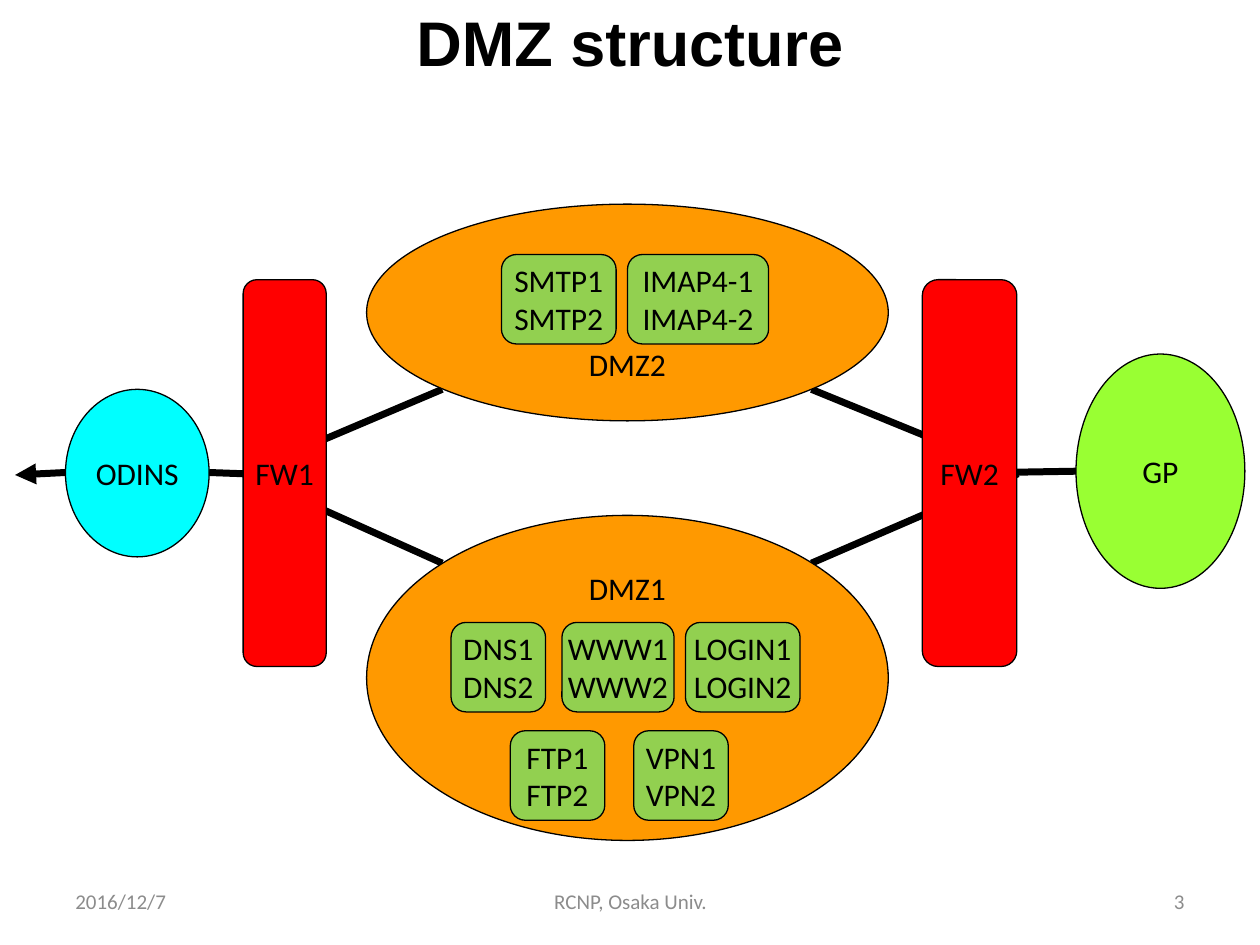
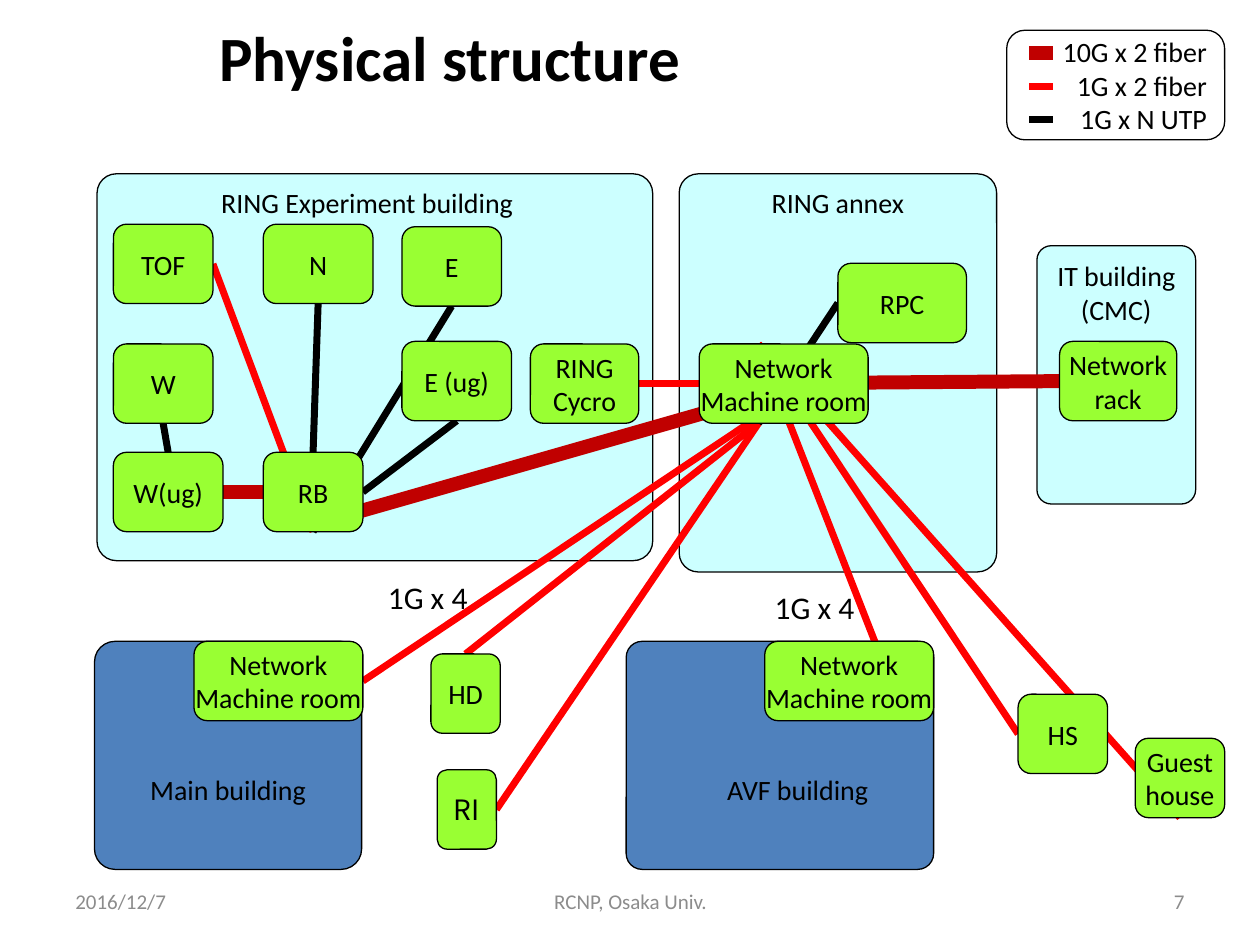
from lxml import etree
from pptx import Presentation
from pptx.dml.color import RGBColor
from pptx.enum import shapes, text
from pptx.oxml.ns import qn
from pptx.util import Pt

# Palette
BLACK = RGBColor(0x00, 0x00, 0x00)
GREY = RGBColor(0x8C, 0x8C, 0x8C)
RED = RGBColor(0xFF, 0x00, 0x00)
DARK_RED = RGBColor(0xC0, 0x00, 0x00)
ORANGE = RGBColor(0xFF, 0x99, 0x00)
CYAN = RGBColor(0x00, 0xFF, 0xFF)
PALE_CYAN = RGBColor(0xCC, 0xFF, 0xFF)
BLUE = RGBColor(0x4F, 0x81, 0xBD)
LIME = RGBColor(0x99, 0xFF, 0x33)
GREEN = RGBColor(0x92, 0xD0, 0x50)

# The slide is a grid of 10 columns and 7.5 rows of square cells
CELL = 914400
COLUMNS, ROWS = 10, 7.5
ROUND = shapes.MSO_SHAPE.ROUNDED_RECTANGLE
ELLIPSE = shapes.MSO_SHAPE.OVAL
TOP, MIDDLE, BOTTOM = (text.MSO_ANCHOR.TOP, text.MSO_ANCHOR.MIDDLE,
                       text.MSO_ANCHOR.BOTTOM)
LEFT, CENTER, RIGHT = text.PP_ALIGN.LEFT, text.PP_ALIGN.CENTER, text.PP_ALIGN.RIGHT
BODY_FONT = "Calibri"
THIN, THICK = 4, 8

# Services: left, width, name pattern of the two servers
SERVICE_HEIGHT = 0.71
SERVICE_ROWS = [
    (2.02, [(3.98, 0.91, "SMTP{}"), (4.98, 1.12, "IMAP4-{}")]),
    (4.94, [(3.58, 0.75, "DNS{}"), (4.46, 0.89, "WWW{}"), (5.44, 0.91, "LOGIN{}")]),
    (5.8, [(4.05, 0.75, "FTP{}"), (5.03, 0.75, "VPN{}")]),
]

# Rooms: left, top, width, label
ROOM_HEIGHT = 0.63
MACHINE_ROOM = "Network\nMachine room"
ROOMS = {
    "tof": (0.9, 1.78, 0.79, "TOF"),
    "n": (2.09, 1.78, 0.87, "N"),
    "e": (3.19, 1.8, 0.79, "E"),
    "w": (0.9, 2.73, 0.79, "W"),
    "e_ug": (3.19, 2.71, 0.87, "E (ug)"),
    "cycro": (4.21, 2.73, 0.86, "RING\nCycro"),
    "w_ug": (0.9, 3.59, 0.87, "W(ug)"),
    "rb": (2.09, 3.59, 0.79, "RB"),
    "rpc": (6.65, 2.09, 1.02, "RPC"),
    "annex": (5.55, 2.73, 1.34, MACHINE_ROOM),
    "rack": (8.41, 2.71, 0.93, "Network\nrack"),
    "main": (1.54, 5.09, 1.34, MACHINE_ROOM),
    "avf": (6.07, 5.09, 1.34, MACHINE_ROOM),
    "hd": (3.42, 5.19, 0.55, "HD"),
    "ri": (3.47, 6.11, 0.47, "RI"),
    "hs": (8.08, 5.51, 0.71, "HS"),
    "guest": (9.01, 5.86, 0.71, "Guest\nhouse"),
}


def cells(*counts):
    return [round(count * CELL) for count in counts]


def write(frame, words, size, align=CENTER, anchor=MIDDLE, wrap=False,
          font=BODY_FONT, color=BLACK, bold=False):
    frame.word_wrap = wrap
    frame.vertical_anchor = anchor
    for index, line in enumerate(words.split("\n")):
        para = frame.paragraphs[0] if index == 0 else frame.add_paragraph()
        para.alignment = align
        span = para.add_run()
        span.text = line
        span.font.size = Pt(size)
        span.font.name = font
        span.font.bold = bold
        span.font.color.rgb = color


def add_box(page, kind, place, fill, words, size, radius=None, inset=None, **style):
    box = page.shapes.add_shape(kind, *cells(*place))
    box.shadow.inherit = False
    if fill is None:
        box.fill.background()
    else:
        box.fill.solid()
        box.fill.fore_color.rgb = fill
    box.line.color.rgb = BLACK
    box.line.width = Pt(0.75)
    if radius is not None:
        box.adjustments[0] = radius
    for side, amount in (inset or {}).items():
        setattr(box.text_frame, "margin_" + side, cells(amount)[0])
    write(box.text_frame, words, size, **style)


def add_label(page, place, words, size, **style):
    label = page.shapes.add_textbox(*cells(*place))
    write(label.text_frame, words, size, wrap=True, **style)


def add_link(page, start, end, color=BLACK, weight=THIN, arrow=False):
    link = page.shapes.add_connector(shapes.MSO_CONNECTOR.STRAIGHT,
                                     *cells(*start, *end))
    link.line.color.rgb = color
    link.line.width = Pt(weight)
    if arrow:
        etree.SubElement(link.line._get_or_add_ln(), qn("a:tailEnd"), type="triangle")
    etree.SubElement(link._element.spPr, qn("a:effectLst"))


def edge(name, side):
    """Middle of one side of a room."""
    left, top, width, _ = ROOMS[name]
    across, down = {"top": (0.5, 0), "bottom": (0.5, 1),
                    "left": (0, 0.5), "right": (1, 0.5)}[side]
    return left + across * width, top + down * ROOM_HEIGHT


def new_page(deck, number, title, place, font):
    page = deck.slides.add_slide(deck.slide_layouts[5])
    heading = page.shapes.title
    heading.left, heading.top, heading.width, heading.height = cells(*place)
    write(heading.text_frame, title, 36, wrap=True, font=font, bold=True)
    # Footer
    for left, width, words, align in [(0.5, 2.33, "2016/12/7", LEFT),
                                      (3.42, 3.17, "RCNP, Osaka Univ.", CENTER),
                                      (7.17, 2.33, str(number), RIGHT)]:
        add_label(page, (left, 6.95, width, 0.4), words, 12,
                  align=align, anchor=MIDDLE, color=GREY)
    return page


def draw_dmz(deck):
    page = new_page(deck, 3, "DMZ structure", (0.75, -0.03, 8.5, 0.71), "Arial")

    # Links, under the zones they join
    outer_wall, inner_wall = (1.93, 3.76), (8.08, 3.76)
    for height in (3.09, 4.47):
        add_link(page, outer_wall, (3.51, height))
        add_link(page, (6.44, height), inner_wall)
    add_link(page, (1.66, 3.75), outer_wall)
    add_link(page, (7.32, 3.76), (8.54, 3.74))
    add_link(page, (0.52, 3.75), (0.12, 3.77), arrow=True)

    # Networks, firewalls and zones
    for kind, place, fill, words, anchor in [
            (ELLIPSE, (0.52, 3.09, 1.14, 1.33), CYAN, "ODINS", MIDDLE),
            (ELLIPSE, (8.54, 2.81, 1.34, 1.86), LIME, "GP", MIDDLE),
            (ROUND, (1.93, 2.22, 0.66, 3.07), RED, "FW1", MIDDLE),
            (ROUND, (7.32, 2.22, 0.75, 3.07), RED, "FW2", MIDDLE),
            (ELLIPSE, (2.91, 1.62, 4.14, 1.72), ORANGE, "DMZ2", BOTTOM),
            (ELLIPSE, (2.91, 4.09, 4.14, 2.58), ORANGE, "DMZ1", TOP)]:
        add_box(page, kind, place, fill, words, 18, anchor=anchor)

    # Servers, in pairs
    for top, services in SERVICE_ROWS:
        for left, width, name in services:
            pair = "\n".join(name.format(number) for number in (1, 2))
            add_box(page, ROUND, (left, top, width, SERVICE_HEIGHT), GREEN, pair, 18)


def draw_buildings(page):
    for place, fill, words, radius, anchor, inset in [
            ((5.39, 1.38, 2.52, 3.16), PALE_CYAN, "RING annex", 0.06, TOP, {}),
            ((0.77, 1.38, 4.41, 3.07), PALE_CYAN, "RING Experiment building",
             0.05, TOP, {"right": 0.22}),
            ((8.23, 1.95, 1.26, 2.05), PALE_CYAN, "IT building\n(CMC)",
             0.09, TOP, {"top": 0.07}),
            ((0.75, 5.09, 2.12, 1.81), BLUE, "Main building",
             0.09, MIDDLE, {"top": 0.58}),
            ((4.97, 5.09, 2.44, 1.81), BLUE, "AVF building",
             0.07, MIDDLE, {"top": 0.58, "left": 0.38})]:
        add_box(page, ROUND, place, fill, words, 16, radius, inset, anchor=anchor)


def draw_cables(page):
    hub_top, hub_bottom, hub_middle = (6.02, 2.73), (6.02, 3.36), (6.42, 3.04)
    # 10G fiber
    for start, end in [((2.64, 4.12), hub_middle),
                       (edge("w_ug", "right"), edge("rb", "left")),
                       (hub_middle, edge("rack", "left"))]:
        add_link(page, start, end, DARK_RED, THICK)
    # 1G fiber
    for start, end in [(edge("hd", "top"), hub_middle),
                       (edge("main", "right"), hub_middle),
                       (edge("ri", "right"), hub_bottom),
                       (hub_top, edge("guest", "bottom")),
                       (hub_top, edge("hs", "left")),
                       (hub_top, (6.95, 5.11)),
                       (edge("cycro", "right"), edge("annex", "left")),
                       (edge("tof", "right"), edge("rb", "bottom"))]:
        add_link(page, start, end, RED)
    # UTP
    for start, end in [(edge("rpc", "left"), hub_bottom),
                       (edge("w", "bottom"), edge("w_ug", "top")),
                       (edge("e_ug", "bottom"), edge("rb", "right")),
                       (edge("e", "bottom"), edge("rb", "bottom")),
                       (edge("n", "bottom"), edge("rb", "top"))]:
        add_link(page, start, end)


def draw_legend(page):
    add_box(page, ROUND, (7.99, 0.24, 1.73, 0.87), None,
            "10G x 2 fiber\n1G x 2 fiber\n1G x N UTP", 16, align=RIGHT)
    for height, color, weight in [(0.42, DARK_RED, THICK), (0.69, RED, THIN),
                                  (0.95, BLACK, THIN)]:
        add_link(page, (8.17, height), (8.36, height), color, weight)


def draw_physical(deck):
    page = new_page(deck, 7, "Physical structure", (0.75, 0.06, 5.64, 0.77), BODY_FONT)
    draw_buildings(page)
    draw_cables(page)
    for name, (left, top, width, words) in ROOMS.items():
        font = "Noto Sans CJK JP" if name == "ri" else BODY_FONT
        add_box(page, ROUND, (left, top, width, ROOM_HEIGHT), LIME, words, 16, font=font)
    for left, top in [(2.98, 4.54), (6.05, 4.62)]:
        add_label(page, (left, top, 0.92, 0.4), "1G x 4", 18, align=LEFT, anchor=TOP)
    draw_legend(page)


def main():
    deck = Presentation()
    deck.slide_width, deck.slide_height = cells(COLUMNS, ROWS)
    draw_dmz(deck)
    draw_physical(deck)
    deck.save("out.pptx")


if __name__ == "__main__":
    main()
